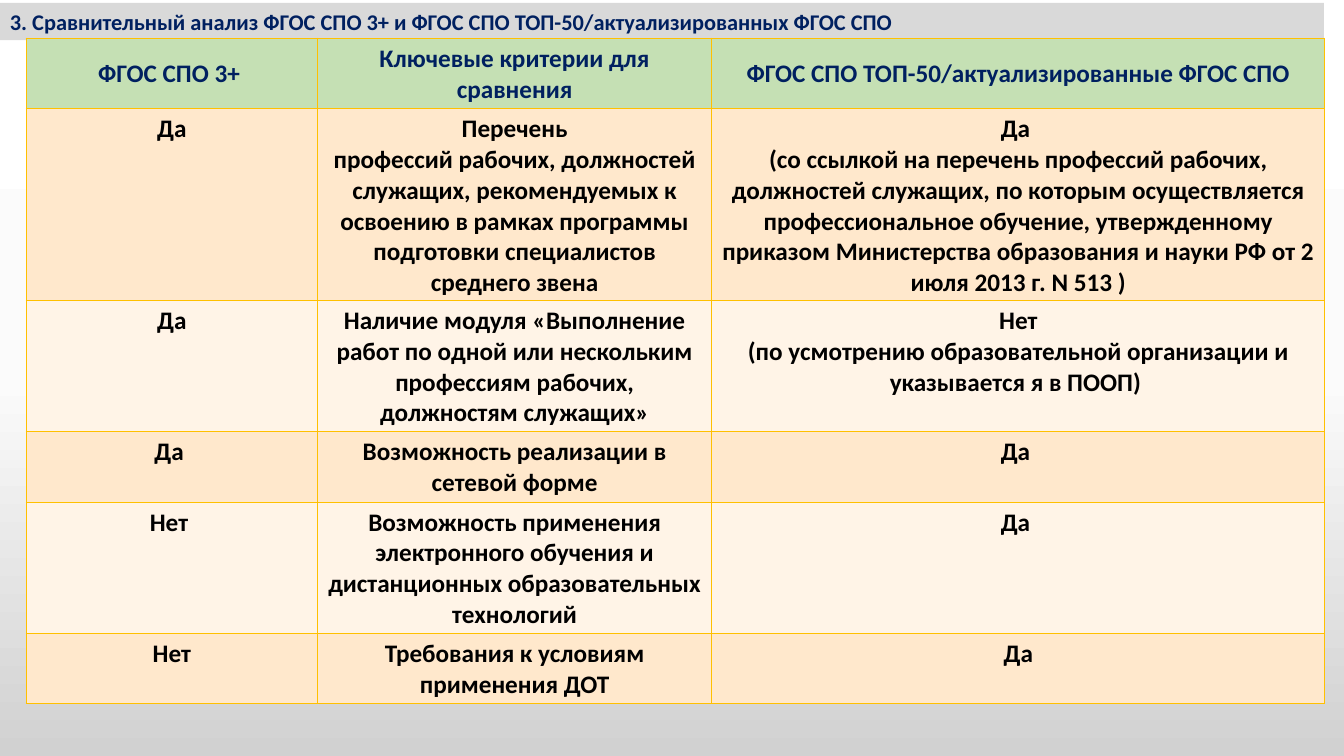
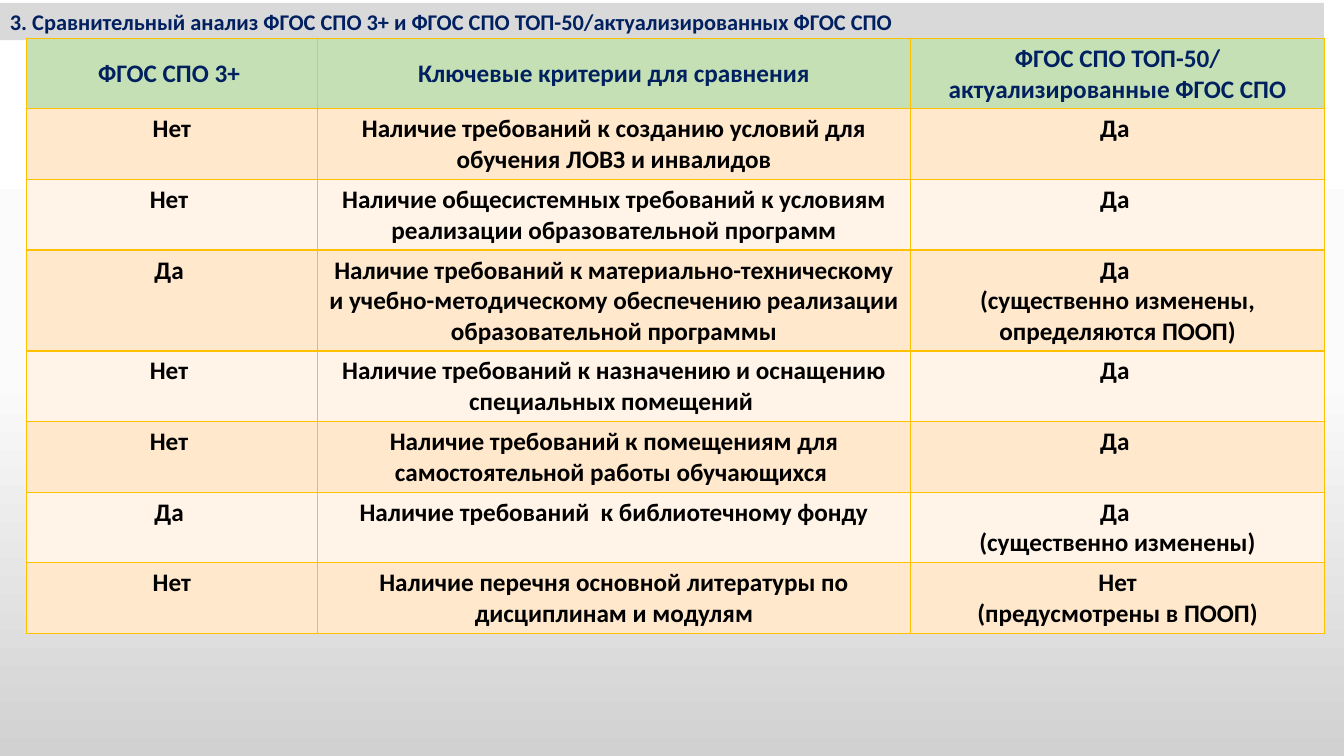
from copy import deepcopy

from lxml.etree import SubElement
from pptx import Presentation
from pptx.dml.color import RGBColor
from pptx.enum.shapes import MSO_SHAPE as Shape
from pptx.enum.text import MSO_ANCHOR as Anchor, MSO_AUTO_SIZE as AutoSize, PP_ALIGN as Align
from pptx.oxml.ns import qn
from pptx.util import Inches, Pt

COLORS = {
    "band": "D9D9D9",
    "heading": "002060",
    "body": "000000",
    "header_row": "C5E0B4",
    "odd_row": "FFE8CC",
    "even_row": "FFF4E7",
    "border": "FFC000",
}
BACKDROP = [(0, "FFFFFF"), (0.5, "FBFBFB"), (1, "D1D1D1")]
FONT = "Calibri"
TITLE = "3. Сравнительный анализ ФГОС СПО 3+ и ФГОС СПО ТОП-50/актуализированных ФГОС СПО"
BAND_BOX = (0, 0.03, 13.13, 0.37)
TABLE_ORIGIN = (0.26, 0.38)
ROW_PADDING, LINE_HEIGHT = 0.1, 0.3

COMPARISONS = [
    {
        "widths": [2.89, 3.91, 6.08],
        "lines": [2, 6, 4, 2, 4, 2],
        "rows": [
            ("ФГОС СПО 3+ ", "Ключевые критерии для сравнения",
             "ФГОС СПО ТОП-50/актуализированные ФГОС СПО"),
            ("Да",
             "Перечень\vпрофессий рабочих, должностей служащих, рекомендуемых к освоению "
             "в рамках программы подготовки специалистов среднего звена",
             "Да \n(со ссылкой на перечень профессий рабочих, должностей служащих, по которым "
             "осуществляется профессиональное обучение, утвержденному приказом Министерства "
             "образования и науки РФ от 2 июля 2013 г. N 513 )"),
            ("Да",
             "Наличие модуля «Выполнение работ по одной или нескольким профессиям рабочих, "
             "должностям служащих»",
             "Нет\n(по усмотрению образовательной организации и указывается я в ПООП) "),
            ("Да ", "Возможность реализации в сетевой форме", "Да "),
            ("Нет ",
             "Возможность применения электронного обучения и дистанционных образовательных "
             "технологий", "Да "),
            ("Нет", "Требования к условиям применения ДОТ", "Да"),
        ],
    },
    {
        "widths": [2.89, 5.88, 4.11],
        "lines": [2, 2, 2, 3, 2, 2, 2, 2],
        "rows": [
            ("ФГОС СПО 3+ ", "Ключевые критерии для сравнения",
             "ФГОС СПО ТОП-50/\nактуализированные ФГОС СПО"),
            ("Нет", "Наличие требований к созданию условий для обучения ЛОВЗ и инвалидов", "Да "),
            ("Нет ",
             "Наличие общесистемных требований к условиям реализации образовательной программ",
             "Да "),
            ("Да ",
             "Наличие требований к материально-техническому и учебно-методическому обеспечению "
             "реализации образовательной программы",
             "Да \n(существенно изменены, определяются ПООП)"),
            ("Нет ", "Наличие требований к назначению и оснащению специальных помещений ", "Да "),
            ("Нет ",
             "Наличие требований к помещениям для самостоятельной работы обучающихся ", "Да "),
            ("Да ", "Наличие требований  к библиотечному фонду", "Да \n(существенно изменены)"),
            ("Нет", "Наличие перечня основной литературы по дисциплинам и модулям",
             "Нет\n(предусмотрены в ПООП)"),
        ],
    },
]


def color(name):
    return RGBColor.from_string(COLORS[name])


def write(frame, text, size=18, ink="body", align=Align.CENTER):
    frame.word_wrap = True
    for index, line in enumerate(text.split("\n")):
        para = frame.add_paragraph() if index else frame.paragraphs[0]
        para.text = line
        para.alignment = align
        for span in para.runs:
            span.font.name = FONT
            span.font.size = Pt(size)
            span.font.bold = True
            span.font.color.rgb = color(ink)


def paint_backdrop(master):
    fill = master.background.fill
    fill.gradient()
    fill.gradient_angle = 270
    stops = master.element.find(".//" + qn("a:gsLst"))
    stops.append(deepcopy(stops[-1]))
    for stop, (position, shade) in zip(fill.gradient_stops, BACKDROP):
        stop.color.rgb = RGBColor.from_string(shade)
        stop.position = position


def add_title_band(page, box):
    band = page.shapes.add_shape(Shape.RECTANGLE, *map(Inches, box))
    band.shadow.inherit = False
    band.fill.solid()
    band.fill.fore_color.rgb = color("band")
    band.line.fill.background()
    write(band.text_frame, TITLE, size=16, ink="heading", align=Align.LEFT)
    band.text_frame.auto_size = AutoSize.SHAPE_TO_FIT_TEXT


def outline(cell):
    properties = cell._tc.get_or_add_tcPr()
    for side in ("a:lnL", "a:lnR", "a:lnT", "a:lnB"):
        line = SubElement(properties, qn(side), w=str(Pt(1)))
        solid = SubElement(line, qn("a:solidFill"))
        SubElement(solid, qn("a:srgbClr"), val=COLORS["border"])


def add_comparison_table(page, origin, widths, lines, rows):
    heights = [ROW_PADDING + LINE_HEIGHT * count for count in lines]
    box = (*origin, sum(widths), sum(heights))
    table = page.shapes.add_table(len(rows), len(widths), *map(Inches, box)).table
    table.first_row = table.horz_banding = False
    for column, width in zip(table.columns, widths):
        column.width = Inches(width)
    for number, (texts, height) in enumerate(zip(rows, heights)):
        table.rows[number].height = Inches(height)
        is_header = number == 0
        shade = "header_row" if is_header else "odd_row" if number % 2 else "even_row"
        for cell, text in zip(table.rows[number].cells, texts):
            outline(cell)
            cell.fill.solid()
            cell.fill.fore_color.rgb = color(shade)
            cell.vertical_anchor = Anchor.MIDDLE if is_header else Anchor.TOP
            write(cell.text_frame, text, ink="heading" if is_header else "body")


def add_comparison_page(deck, comparison):
    page = deck.slides.add_slide(deck.slide_layouts[6])
    add_title_band(page, BAND_BOX)
    add_comparison_table(page, TABLE_ORIGIN, **comparison)


def main():
    deck = Presentation()
    deck.slide_width, deck.slide_height = Inches(13.33), Inches(7.5)
    paint_backdrop(deck.slide_master)
    for comparison in COMPARISONS:
        add_comparison_page(deck, comparison)
    deck.save("out.pptx")


if __name__ == "__main__":
    main()
